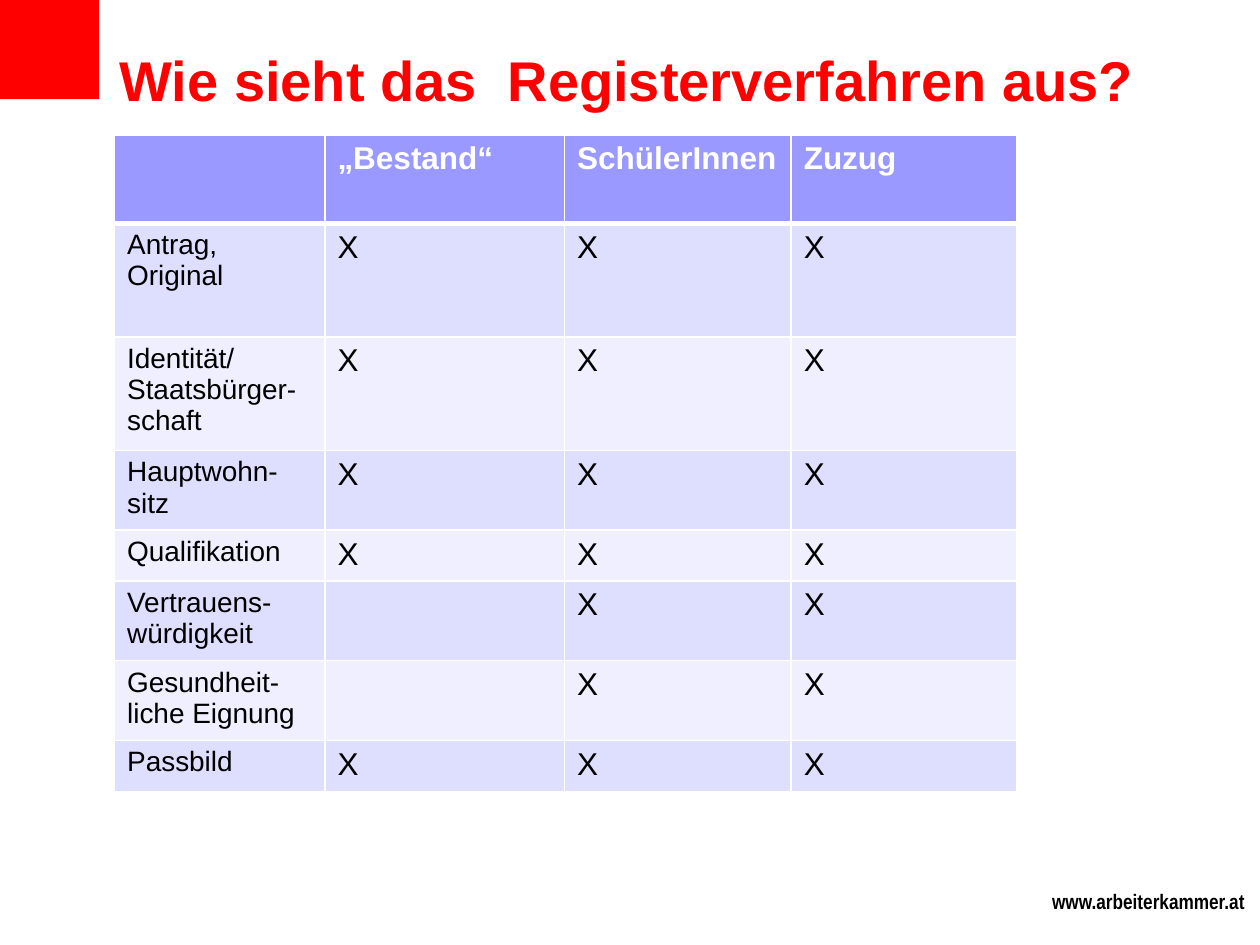
from typing import NamedTuple

from lxml import etree
from pptx import Presentation
from pptx.dml.color import RGBColor
from pptx.enum.shapes import MSO_SHAPE
from pptx.enum.text import MSO_ANCHOR
from pptx.oxml.ns import qn
from pptx.util import Cm, Pt

RECTANGLE = MSO_SHAPE.RECTANGLE
TOP = MSO_ANCHOR.TOP

COLORS = {
    "red": "FF0000",
    "black": "000000",
    "white": "FFFFFF",
    "header": "9999FF",
    "odd": "DEDEFF",
    "even": "EFEFFF",
}
HEADINGS = ("", "„Bestand“", "SchülerInnen", "Zuzug")
COLUMN_WIDTHS = (4.24, 4.83, 4.57, 4.55)
HEADER_HEIGHT = 1.78
THIN, THICK = 1, 3


class Requirement(NamedTuple):
    label: str
    height: float
    existing: bool = True  # also required for the "Bestand" group


REQUIREMENTS = (
    Requirement("Antrag, Original", 2.29),
    Requirement("Identität/ Staatsbürger-schaft", 2.29),
    Requirement("Hauptwohn-sitz", 1.6),
    Requirement("Qualifikation", 1.02),
    Requirement("Vertrauens-würdigkeit", 1.6, existing=False),
    Requirement("Gesundheit-liche Eignung", 1.6, existing=False),
    Requirement("Passbild", 1.04),
)


def rgb(name: str) -> RGBColor:
    return RGBColor.from_string(COLORS[name])


def write(frame, text: str, *, size: float, color: str = "black",
          bold: bool = False, font: str = "Arial") -> None:
    paragraph = frame.paragraphs[0]
    paragraph.font.size = Pt(size)
    if not text:
        return
    run = paragraph.add_run()
    run.text = text
    run.font.name = font
    run.font.size = Pt(size)
    run.font.bold = bold
    run.font.color.rgb = rgb(color)


def add_text_frame(slide, left: float, top: float, width: float, height: float):
    frame = slide.shapes.add_textbox(Cm(left), Cm(top), Cm(width), Cm(height)).text_frame
    frame.word_wrap = True
    frame.vertical_anchor = TOP
    return frame


def set_borders(cell, top: float, bottom: float) -> None:
    properties = cell._tc.get_or_add_tcPr()
    for side, width in (("L", THIN), ("R", THIN), ("T", top), ("B", bottom)):
        line = etree.SubElement(properties, qn(f"a:ln{side}"), w=str(Pt(width)))
        fill = etree.SubElement(line, qn("a:solidFill"))
        etree.SubElement(fill, qn("a:srgbClr"), val=COLORS["white"])


def fill_row(table, row: int, texts: tuple[str, ...], fill: str) -> None:
    is_header = row == 0
    for column, text in enumerate(texts):
        cell = table.cell(row, column)
        set_borders(cell, top=THICK if row == 1 else THIN,
                    bottom=THICK if is_header else THIN)
        cell.fill.solid()
        cell.fill.fore_color.rgb = rgb(fill)
        write(cell.text_frame, text, bold=is_header,
              size=16 if column == 0 and not is_header else 18,
              color="white" if is_header else "black")


def add_requirements_table(slide) -> None:
    heights = (HEADER_HEIGHT, *(item.height for item in REQUIREMENTS))
    table = slide.shapes.add_table(
        len(heights), len(COLUMN_WIDTHS), Cm(2.31), Cm(2.72),
        Cm(sum(COLUMN_WIDTHS)), Cm(sum(heights))).table
    for column, width in zip(table.columns, COLUMN_WIDTHS):
        column.width = Cm(width)
    for row, height in zip(table.rows, heights):
        row.height = Cm(height)

    fill_row(table, 0, HEADINGS, "header")
    for row, item in enumerate(REQUIREMENTS, start=1):
        marks = ("X" if item.existing else "", "X", "X")
        fill_row(table, row, (item.label, *marks), "odd" if row % 2 else "even")


def main() -> None:
    presentation = Presentation()
    presentation.slide_width, presentation.slide_height = Cm(25.4), Cm(19.05)
    slide = presentation.slides.add_slide(presentation.slide_layouts[6])

    # Corner square
    corner = slide.shapes.add_shape(RECTANGLE, 0, 0, Cm(2), Cm(2))
    corner.shadow.inherit = False
    corner.fill.solid()
    corner.fill.fore_color.rgb = rgb("red")
    corner.line.fill.background()

    # Web address
    write(add_text_frame(slide, 20.96, 17.78, 4.65, 0.76),
          "www.arbeiterkammer.at", size=12, bold=True, font="Arial Narrow")

    # Title
    title = add_text_frame(slide, 2.11, 0.76, 21.39, 3.18)
    title.margin_left, title.margin_top = Cm(0.3), Cm(0.15)
    write(title, "Wie sieht das  Registerverfahren aus?",
          size=32, color="red", bold=True)

    # Requirements by group
    add_requirements_table(slide)

    presentation.save("out.pptx")


if __name__ == "__main__":
    main()
